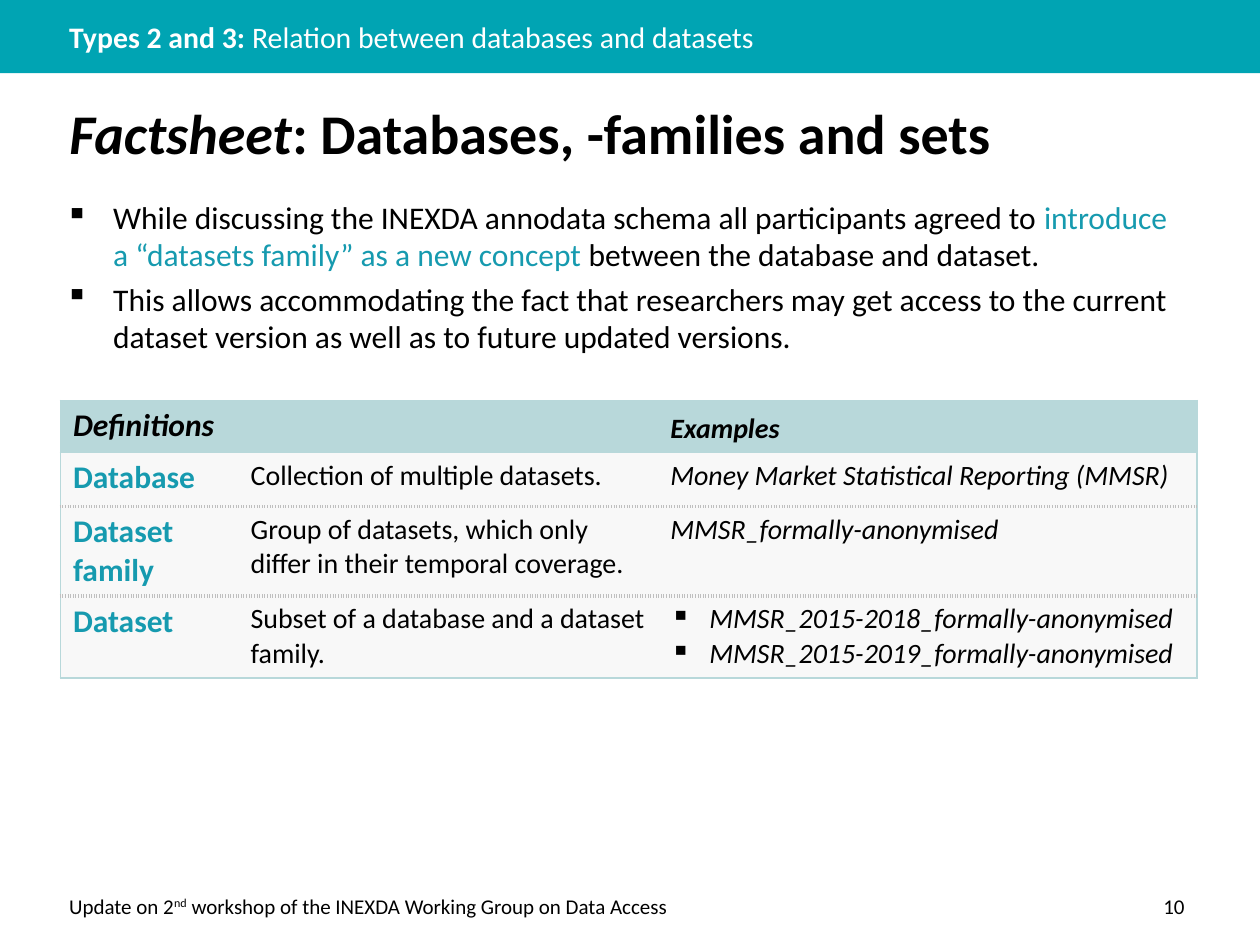
import pptx
import pptx.util
import pptx.dml.color
import pptx.enum.shapes
import pptx.enum.text
import pptx.oxml.ns
from lxml import etree

Inches, Pt = pptx.util.Inches, pptx.util.Pt
Align, Anchor = pptx.enum.text.PP_ALIGN, pptx.enum.text.MSO_ANCHOR
RGB = pptx.dml.color.RGBColor.from_string
qn = pptx.oxml.ns.qn

COLORS = {"band": "00A4B3", "accent": "169AAF", "text": "000000", "white": "FFFFFF",
          "head": "B8D8DA", "row": "F8F8F8", "dots": "BFBFBF"}
LEFT = 0.45
BODY_WIDTH = 9.05


def write(para, runs, size, bullet_indent=0):
    """Fill a paragraph from (text, style letters, colour key) runs: b bold, i italic, ^ raised."""
    if bullet_indent:
        props = para._p.get_or_add_pPr()
        props.set("marL", str(Inches(bullet_indent)))
        props.set("indent", str(-Inches(bullet_indent)))
        etree.SubElement(props, qn("a:buChar")).set("char", "▪")
    for text, style, color in runs:
        span = para.add_run()
        span.text = text
        span.font.name = "Calibri"
        span.font.size = Pt(size)
        span.font.bold = "b" in style
        span.font.italic = "i" in style
        span.font.color.rgb = RGB(COLORS[color])
        if "^" in style:
            span.font._element.set("baseline", "30000")


def set_edge(cell, side, color=None, width=1, dash="solid"):
    line = etree.SubElement(cell._tc.get_or_add_tcPr(), qn("a:ln" + side))
    line.set("w", str(Pt(width)))
    if color:
        fill = etree.SubElement(line, qn("a:solidFill"))
        etree.SubElement(fill, qn("a:srgbClr")).set("val", COLORS[color])
        etree.SubElement(line, qn("a:prstDash")).set("val", dash)
    else:
        etree.SubElement(line, qn("a:noFill"))


deck = pptx.Presentation()
deck.slide_width, deck.slide_height = Inches(10), Inches(7.5)
page = deck.slides.add_slide(deck.slide_layouts[5])

# Header band
band = page.shapes.add_shape(pptx.enum.shapes.MSO_SHAPE.RECTANGLE, 0, 0, deck.slide_width, Inches(0.58))
band.shadow.inherit = False
band.fill.solid()
band.fill.fore_color.rgb = RGB(COLORS["band"])
band.line.fill.background()

# Title
title = page.shapes.title
title.left, title.top = Inches(LEFT), Inches(0.71)
title.width, title.height = Inches(BODY_WIDTH), Inches(0.67)
title.text_frame.vertical_anchor = Anchor.MIDDLE
heading = title.text_frame.paragraphs[0]
heading.alignment = Align.LEFT
write(heading, [("Factsheet", "bi", "text"), (": Databases, -families and sets", "b", "text")], 32)

# Section label, bullets, footer and page number:
# left, top, width, height, anchor, alignment, size, bullet indent, paragraphs
text_boxes = [
    (LEFT, 0.07, 8.29, 0.44, Anchor.MIDDLE, Align.LEFT, 17, 0,
     [[("Types 2 and 3: ", "b", "white"), ("Relation between databases and datasets", "", "white")]]),
    (0.42, 1.52, BODY_WIDTH, 1.6, Anchor.TOP, Align.LEFT, 18, 0.38,
     [[("While discussing the INEXDA annodata schema all participants agreed to ", "", "text"),
       ("introduce a “datasets family” as a new concept ", "", "accent"),
       ("between the database and dataset.", "", "text")],
      [("This allows accommodating the fact that researchers may get access to the current "
        "dataset version as well as to future updated versions.", "", "text")]]),
    (LEFT, 7.04, 8.05, 0.31, Anchor.TOP, Align.LEFT, 12, 0,
     [[("Update on 2", "", "text"), ("nd", "^", "text"),
       (" workshop of the INEXDA Working Group on Data Access", "", "text")]]),
    (8.64, 7.04, 0.86, 0.31, Anchor.TOP, Align.RIGHT, 12, 0, [[("10", "", "text")]]),
]
for left, top, width, height, anchor, alignment, size, indent, paragraphs in text_boxes:
    box = page.shapes.add_textbox(Inches(left), Inches(top), Inches(width), Inches(height))
    frame = box.text_frame
    frame.word_wrap = True
    frame.vertical_anchor = anchor
    for index, runs in enumerate(paragraphs):
        para = frame.add_paragraph() if index else frame.paragraphs[0]
        write(para, runs, size, indent)
        para.alignment = alignment
        if index:
            para.space_before = Pt(0.2 * size)

# Table of definitions; a cell is a list of paragraphs
rows = [
    (["Definitions"], [], ["Examples"]),
    (["Database"], ["Collection of multiple datasets."], ["Money Market Statistical Reporting (MMSR)"]),
    (["Dataset family"], ["Group of datasets, which only differ in their temporal coverage."],
     ["MMSR_formally-anonymised"]),
    (["Dataset"], ["Subset of a database and a dataset family."],
     ["MMSR_2015-2018_formally-anonymised", "MMSR_2015-2019_formally-anonymised"]),
]
column_widths = [1.41, 3.33, 4.28]
row_heights = [0.41, 0.43, 0.71, 0.65]
column_styles = [(18, "b", "accent"), (16, "", "text"), (16, "i", "text")]
dotted = ("dots", 2.25, "sysDot")
rules = [("head",), ("head",), dotted, dotted, ("head",)]

table = page.shapes.add_table(len(rows), len(column_widths), Inches(0.48), Inches(3.18),
                              Inches(sum(column_widths)), Inches(sum(row_heights))).table
table.first_row = table.horz_banding = False
for column, width in zip(table.columns, column_widths):
    column.width = Inches(width)
for r, row in enumerate(rows):
    table.rows[r].height = Inches(row_heights[r])
    for c, lines in enumerate(row):
        cell = table.cell(r, c)
        set_edge(cell, "L", *(["head"] if c == 0 else []))
        set_edge(cell, "R", *(["head"] if c == len(row) - 1 else []))
        set_edge(cell, "T", *rules[r])
        set_edge(cell, "B", *rules[r + 1])
        cell.fill.solid()
        cell.fill.fore_color.rgb = RGB(COLORS["row" if r else "head"])
        size, style, color = column_styles[c]
        if r == 0:
            style, color = "bi", "text"
            cell.vertical_anchor = Anchor.BOTTOM if c == 2 else Anchor.TOP
        for index, line in enumerate(lines):
            para = cell.text_frame.add_paragraph() if index else cell.text_frame.paragraphs[0]
            write(para, [(line, style, color)], size, 0.31 if len(lines) > 1 else 0)

deck.save("out.pptx")
